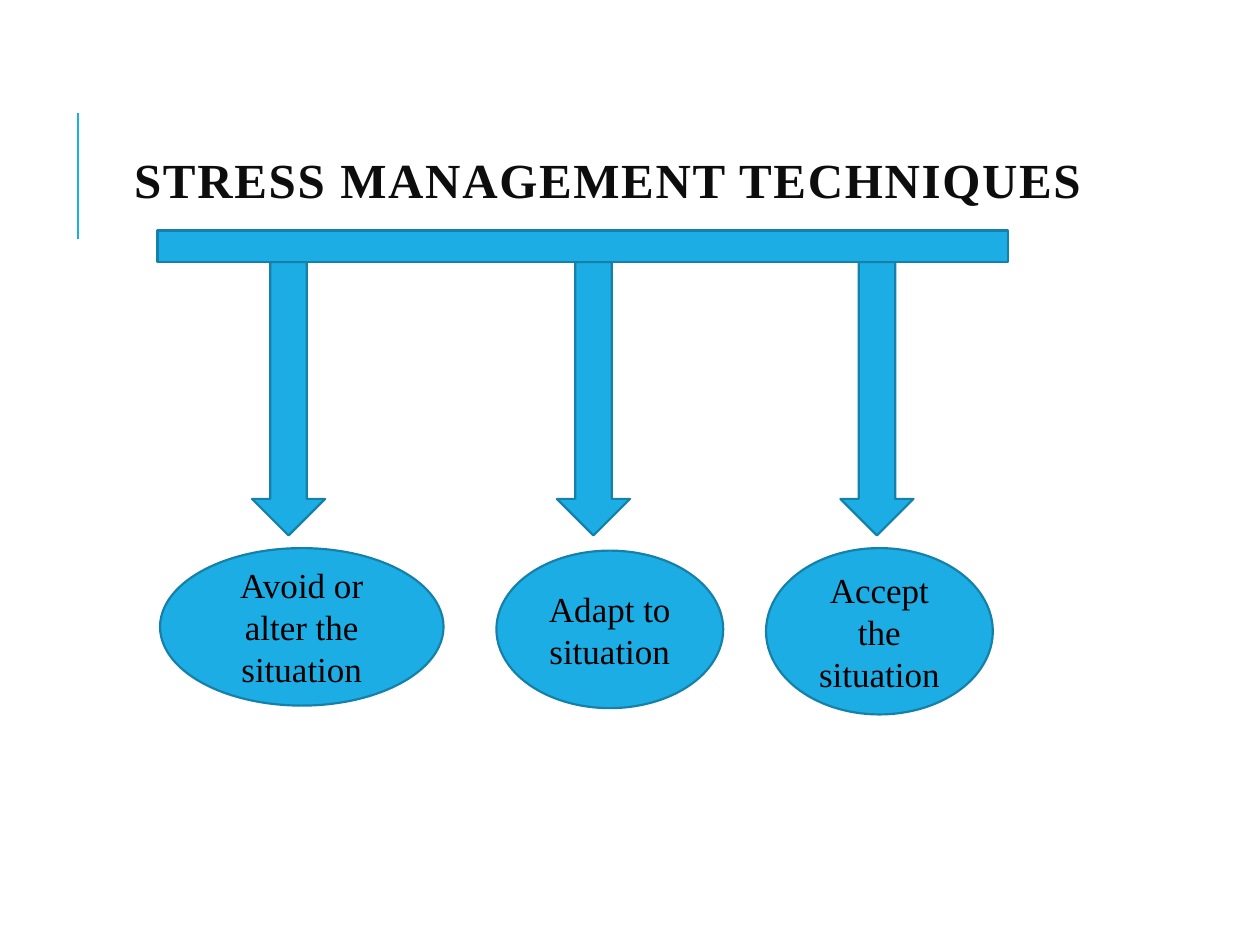
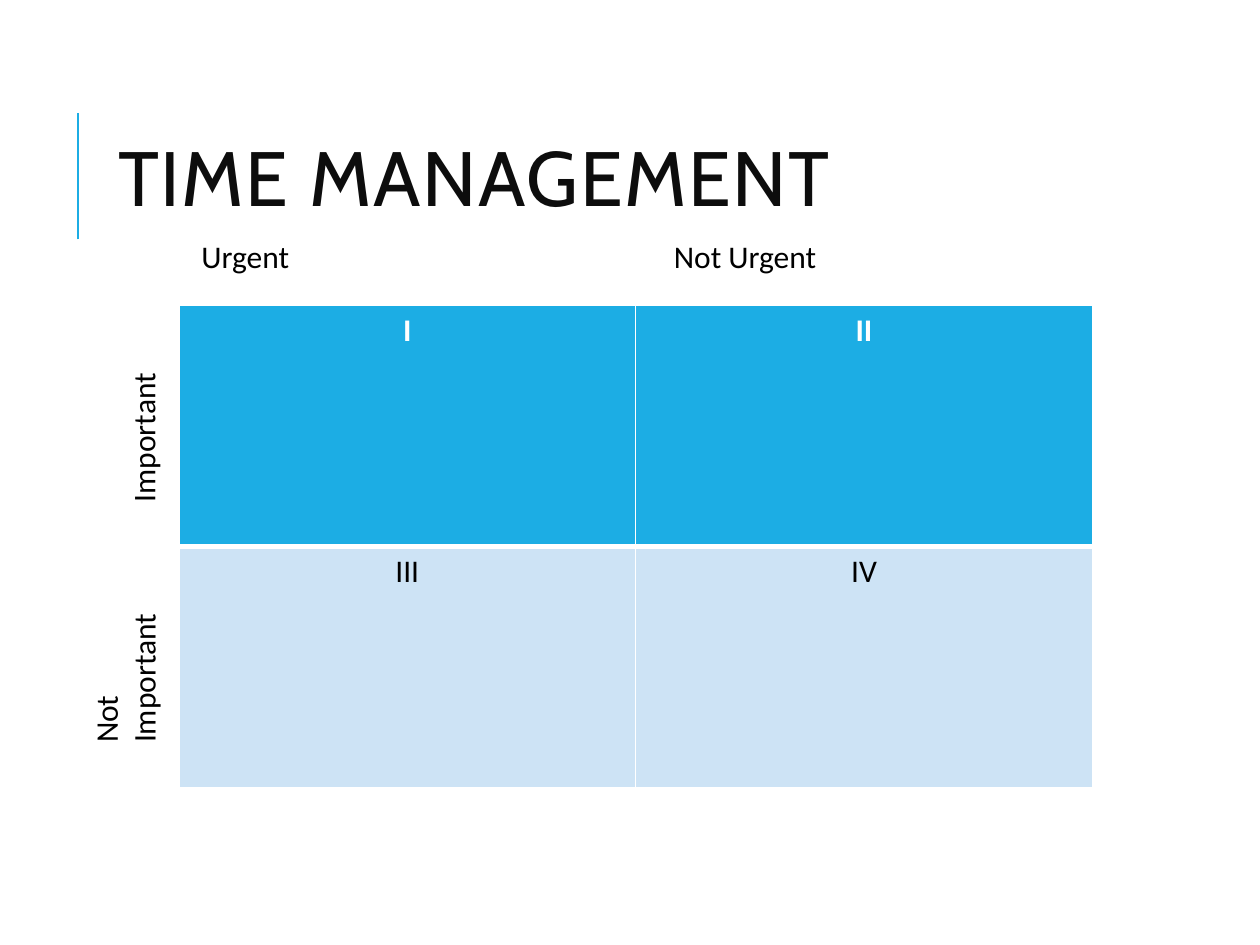
import pptx
import pptx.dml.color
import pptx.enum.shapes
import pptx.enum.text
import pptx.oxml
import pptx.oxml.ns
import pptx.util

Inches = pptx.util.Inches
Pt = pptx.util.Pt
RGBColor = pptx.dml.color.RGBColor
SHAPE = pptx.enum.shapes.MSO_SHAPE
ANCHOR = pptx.enum.text.MSO_ANCHOR
ALIGN = pptx.enum.text.PP_ALIGN

COLORS = {
    "accent": "1CADE4",
    "outline": "1580A9",
    "pale": "CDE3F5",
    "title": "0D0D0D",
    "text": "000000",
    "white": "FFFFFF",
}


def write(frame, text, size, font, color="text", bold=False, align=ALIGN.LEFT):
    """Fill a text frame with one styled paragraph and return it."""
    frame.word_wrap = True
    paragraph = frame.paragraphs[0]
    paragraph.text = text
    paragraph.alignment = align
    paragraph.font.size = Pt(size)
    paragraph.font.name = font
    paragraph.font.bold = bold
    paragraph.font.color.rgb = RGBColor.from_string(COLORS[color])
    return paragraph


def add_block(slide, preset, left, top, width, height):
    """Add an accent-coloured shape with a darker outline."""
    block = slide.shapes.add_shape(
        preset, Inches(left), Inches(top), Inches(width), Inches(height))
    block.shadow.inherit = False
    block.fill.solid()
    block.fill.fore_color.rgb = RGBColor.from_string(COLORS["accent"])
    block.line.color.rgb = RGBColor.from_string(COLORS["outline"])
    block.line.width = Pt(1.25)
    return block


deck = pptx.Presentation()
deck.slide_width = Inches(10)
deck.slide_height = Inches(7.5)

# Both slides: accent rule and title
slides = []
for title, size, font, bold, align in [
    ("STRESS MANAGEMENT TECHNIQUES", 28, "Times New Roman", True, ALIGN.CENTER),
    ("TIME MANAGEMENT", 44, "Cabin", False, ALIGN.LEFT),
]:
    slide = deck.slides.add_slide(deck.slide_layouts[6])
    slides.append(slide)
    rule = slide.shapes.add_connector(
        pptx.enum.shapes.MSO_CONNECTOR.STRAIGHT,
        Inches(0.62), Inches(1.9), Inches(0.62), Inches(0.9))
    rule.line.color.rgb = RGBColor.from_string(COLORS["accent"])
    rule.line.width = Pt(1.5)
    rule._element.spPr.append(pptx.oxml.parse_xml(
        f'<a:effectLst {pptx.oxml.ns.nsdecls("a")}/>'))

    heading = slide.shapes.add_textbox(
        Inches(0.84), Inches(0.64), Inches(7.97), Inches(1.64)).text_frame
    heading.vertical_anchor = ANCHOR.MIDDLE
    paragraph = write(heading, title, size, font, "title", bold, align)
    paragraph.line_spacing = 0.8
    paragraph.runs[0]._r.get_or_add_rPr().set("spc", "100")

techniques, time_matrix = slides

# Stress management: a bar with three arrows leading to techniques
for arrow_left in (2, 4.42, 6.67):
    add_block(techniques, SHAPE.DOWN_ARROW, arrow_left, 2.08, 0.58, 2.17)
add_block(techniques, SHAPE.RECTANGLE, 1.25, 1.83, 6.75, 0.25)
for technique, left, top, width, height in [
    ("Avoid or alter the situation", 1.27, 4.35, 2.25, 1.25),
    ("Adapt to situation", 3.94, 4.37, 1.8, 1.25),
    ("Accept the situation", 6.08, 4.35, 1.8, 1.32),
]:
    oval = add_block(techniques, SHAPE.OVAL, left, top, width, height)
    oval.text_frame.vertical_anchor = ANCHOR.MIDDLE
    write(oval.text_frame, technique, 20, "Times New Roman", align=ALIGN.CENTER)

# Time management: urgency by importance
matrix = time_matrix.shapes.add_table(
    2, 2, Inches(1.42), Inches(2.42), Inches(7.25), Inches(3.83)).table
for row, (quadrants, fill, color, bold) in enumerate([
    (("I", "II"), "accent", "white", True),
    (("III", "IV"), "pale", "text", False),
]):
    for column, quadrant in enumerate(quadrants):
        cell = matrix.cell(row, column)
        write(cell.text_frame, quadrant, 18, "Calibri", color, bold, ALIGN.CENTER)
        cell.fill.solid()
        cell.fill.fore_color.rgb = RGBColor.from_string(COLORS[fill])
        inner_side = ("lnB", "lnT")[row]
        for index, side in enumerate(("lnL", "lnR", "lnT", "lnB")):
            width = Pt(3 if side == inner_side else 1)
            cell._tc.get_or_add_tcPr().insert(index, pptx.oxml.parse_xml(
                f'<a:{side} {pptx.oxml.ns.nsdecls("a")} w="{width}"><a:solidFill>'
                f'<a:srgbClr val="{COLORS["white"]}"/></a:solidFill></a:{side}>'))

for label, left, top, width, height, rotation, anchor in [
    ("Urgent", 1.5, 1.83, 3.42, 0.4, 0, ANCHOR.TOP),
    ("Not Urgent", 5.25, 1.83, 3.25, 0.42, 0, ANCHOR.TOP),
    ("Important", 0.3, 3.05, 1.67, 0.4, 270, ANCHOR.TOP),
    ("Not Important", -0.06, 4.6, 1.48, 1.31, 270, ANCHOR.BOTTOM),
]:
    axis_label = time_matrix.shapes.add_textbox(
        Inches(left), Inches(top), Inches(width), Inches(height))
    axis_label.rotation = rotation
    axis_label.text_frame.vertical_anchor = anchor
    write(axis_label.text_frame, label, 18, "Calibri")

deck.save("out.pptx")
